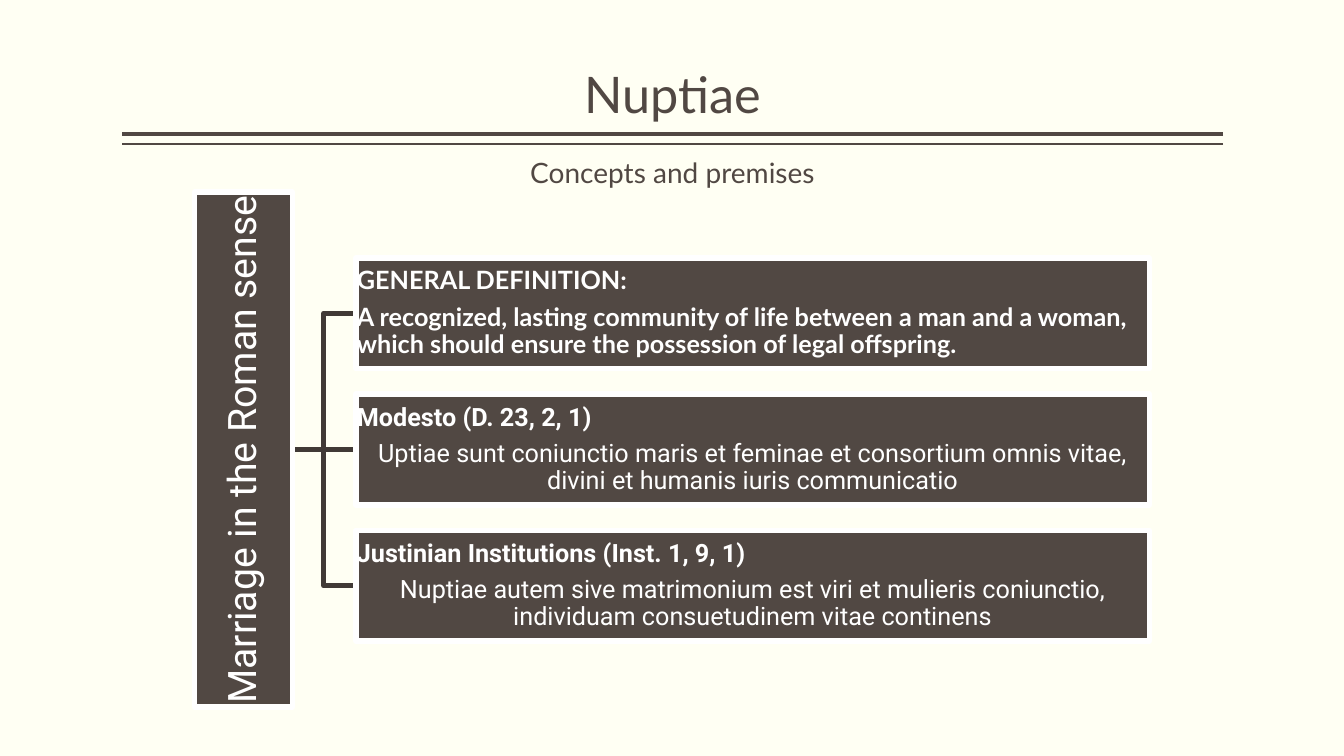
import pptx
import pptx.util
import pptx.dml.color
import pptx.enum.shapes
import pptx.enum.text
import pptx.oxml

Inches, Pt = pptx.util.Inches, pptx.util.Pt
ALIGN = pptx.enum.text.PP_ALIGN
ANCHOR = pptx.enum.text.MSO_ANCHOR
COLORS = {
    name: pptx.dml.color.RGBColor.from_string(value)
    for name, value in {
        "cream": "FFFFF3",
        "brown": "514843",
        "dark": "413A36",
        "white": "FFFFFF",
    }.items()
}

prs = pptx.Presentation()
prs.slide_width, prs.slide_height = Inches(13.33), Inches(7.5)
s = prs.slides.add_slide(prs.slide_layouts[6])
s.background.fill.solid()
s.background.fill.fore_color.rgb = COLORS["cream"]


def add_text(sp, text, size, font="Lato", color="brown", bold=False,
             align=ALIGN.CENTER, anchor=ANCHOR.MIDDLE, inset=(0.01, 0.01),
             spacing=0.9, after=0, first=True):
    """Write one paragraph into sp; inset is (horizontal, vertical) inches."""
    tf = sp.text_frame
    tf.word_wrap = True
    tf.vertical_anchor = anchor
    tf.margin_left = tf.margin_right = Inches(inset[0])
    tf.margin_top = tf.margin_bottom = Inches(inset[1])
    p = tf.paragraphs[0] if first else tf.add_paragraph()
    p.alignment, p.line_spacing, p.space_after = align, spacing, Pt(after)
    r = p.add_run()
    r.text = text
    r.font.name, r.font.size, r.font.bold = font, Pt(size), bold
    r.font.color.rgb = COLORS[color]


def add_line(x1, y1, x2, y2, color, width):
    line = s.shapes.add_connector(pptx.enum.shapes.MSO_CONNECTOR.STRAIGHT,
                                  Inches(x1), Inches(y1), Inches(x2), Inches(y2))
    line.line.color.rgb = COLORS[color]
    line.line.width = Pt(width)
    line._element.spPr.append(pptx.oxml.parse_xml(
        '<a:effectLst xmlns:a="http://schemas.openxmlformats.org/drawingml/2006/main"/>'))


# Heading
left, width = 1.21, 10.92
for y, weight in ((1.33, 3), (1.43, 1)):
    add_line(left + width, y, left, y, "brown", weight)
title = s.shapes.add_textbox(Inches(left), Inches(0.08), Inches(width), Inches(1.2))
add_text(title, "Nuptiae", 36, anchor=ANCHOR.BOTTOM, inset=(0, 0.05))
subtitle = s.shapes.add_textbox(Inches(left), Inches(1.49), Inches(width), Inches(0.44))
add_text(subtitle, "Concepts and premises", 20, anchor=ANCHOR.TOP,
         inset=(0.1, 0.05), spacing=1)

# Diagram: one root bar and three boxes around a common centre line
center_y, pitch = 4.46, 1.35
root_x, fork_x, box_x = 2.9, 3.21, 3.53
box_w, box_h = 7.87, 1.1
bar_w, bar_h = 5.11, 0.97
outline = 3.78

add_line(root_x, center_y, box_x, center_y, "dark", outline)
for y in (center_y - pitch, center_y + pitch):
    builder = s.shapes.build_freeform(Inches(root_x), Inches(center_y))
    builder.add_line_segments(
        [(Inches(px), Inches(py)) for px, py in ((fork_x, center_y), (fork_x, y), (box_x, y))],
        close=False)
    branch = builder.convert_to_shape()
    branch.shadow.inherit = False
    branch.fill.background()
    branch.line.color.rgb = COLORS["dark"]
    branch.line.width = Pt(outline)

entries = [
    ("GENERAL DEFINITION:",
     "A recognized, lasting community of life between a man and a woman, "
     "which should ensure the possession of legal offspring.",
     "Lato", True, ALIGN.JUSTIFY, ALIGN.LEFT),
    ("Modesto (D. 23, 2, 1)",
     "Uptiae sunt coniunctio maris et feminae et consortium omnis vitae, "
     "divini et humanis iuris communicatio",
     "Roboto", False, ALIGN.JUSTIFY, ALIGN.CENTER),
    ("Justinian Institutions (Inst. 1, 9, 1)",
     "Nuptiae autem sive matrimonium est viri et mulieris coniunctio, "
     "individuam consuetudinem vitae continens",
     "Roboto", False, ALIGN.LEFT, ALIGN.CENTER),
]
frames = [(root_x - bar_h / 2 - bar_w / 2, center_y, bar_w, bar_h)]
frames += [(box_x, center_y + (i - 1) * pitch, box_w, box_h) for i in range(len(entries))]
boxes = []
for x, middle, w, h in frames:
    sp = s.shapes.add_shape(pptx.enum.shapes.MSO_SHAPE.RECTANGLE,
                            Inches(x), Inches(middle - h / 2), Inches(w), Inches(h))
    sp.shadow.inherit = False
    sp.fill.solid()
    sp.fill.fore_color.rgb = COLORS["brown"]
    sp.line.color.rgb = COLORS["white"]
    sp.line.width = Pt(outline)
    boxes.append(sp)

root, *details = boxes
root.rotation = 270
add_text(root, "Marriage in the Roman sense", 28, font="Roboto", color="white",
         inset=(0.02, 0.02), after=9.8)
for sp, (heading, body, font, bold, head_align, body_align) in zip(details, entries):
    add_text(sp, heading, 18, font=font, color="white", bold=True,
             align=head_align, after=6.3)
    add_text(sp, body, 18, font=font, color="white", bold=bold,
             align=body_align, after=6.3, first=False)

prs.save("out.pptx")
